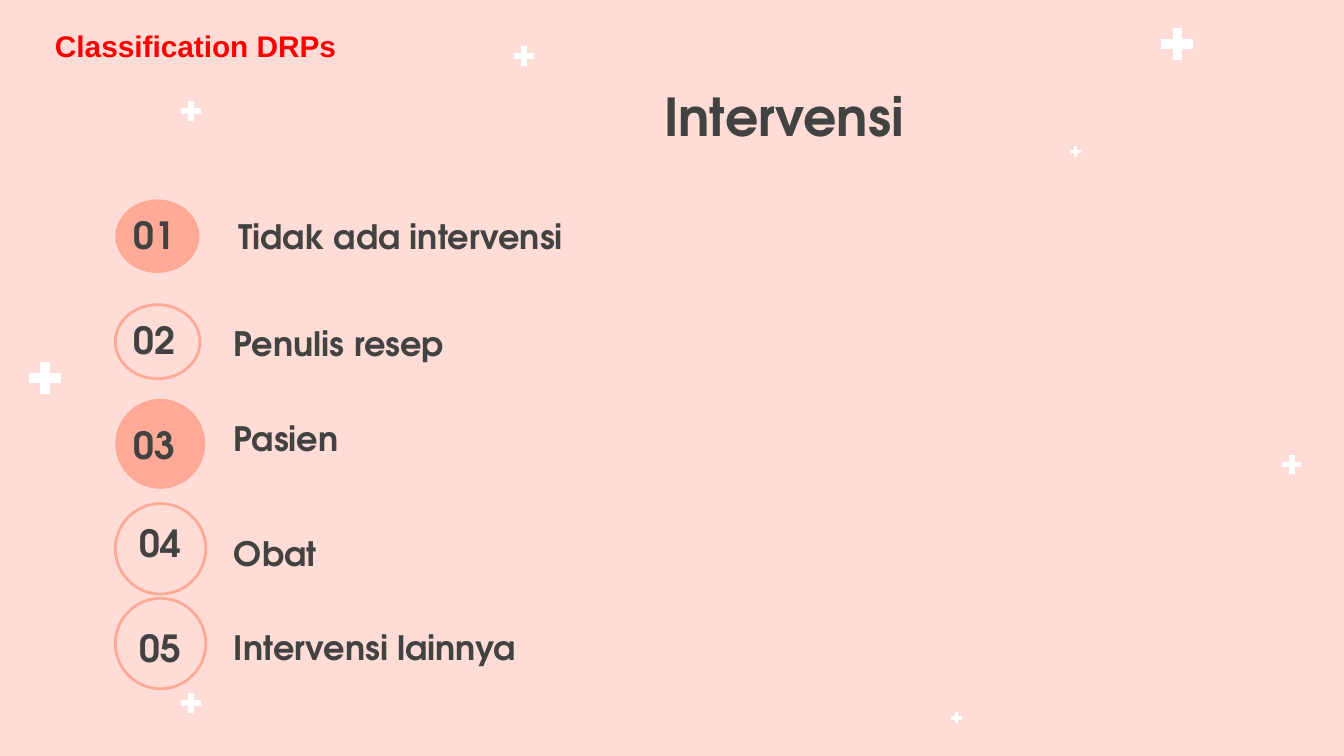
"""Build the slide that lists the five kinds of intervention."""
from dataclasses import dataclass

from pptx import Presentation
from pptx import util as u
from pptx.dml.color import RGBColor
from pptx.enum import shapes, text


@dataclass(frozen=True)
class Theme:
    back: str = "FFDCD6"
    coral: str = "FFAA97"
    ink: str = "424242"
    red: str = "FF0000"
    white: str = "FFFFFF"
    font: str = "TeX Gyre Adventor"
    plain: str = "Arial"
    title: int = 28
    num: int = 20
    label: int = 18
    tag: int = 16
    line: float = 1.5


class Deck:
    def __init__(self, theme, wide, high):
        self.theme = theme
        self.prs = Presentation()
        self.prs.slide_width, self.prs.slide_height = u.Cm(wide), u.Cm(high)
        self.slide = self.prs.slides.add_slide(self.prs.slide_layouts[6])
        self.paint(self.slide.background.fill, theme.back)

    def paint(self, fill, tone):
        fill.solid()
        fill.fore_color.rgb = RGBColor.from_string(tone)

    def plus(self, x, y, size):
        group = self.slide.shapes.add_group_shape()
        thin = size * 0.3
        for wide, high in ((thin, size), (size, thin)):
            left, right = u.Cm(x - wide / 2), u.Cm(x + wide / 2)
            top, base = u.Cm(y - high / 2), u.Cm(y + high / 2)
            pen = group.shapes.build_freeform(right, top)
            pen.add_line_segments([(right, base), (left, base), (left, top)])
            bar = pen.convert_to_shape()
            bar.shadow.inherit = False
            self.paint(bar.fill, self.theme.white)
            bar.line.fill.background()

    def disc(self, box, full):
        item = self.slide.shapes.add_shape(shapes.MSO_SHAPE.OVAL, *map(u.Cm, box))
        item.shadow.inherit = False
        if full:
            self.paint(item.fill, self.theme.coral)
            item.line.fill.background()
        else:
            item.fill.background()
            self.paint(item.line.fill, self.theme.coral)
            item.line.width = u.Pt(self.theme.line)

    def words(self, box, runs, size, tone=None, font=None, mid=False, pad=0.25,
              anchor=text.MSO_ANCHOR.MIDDLE):
        frame = self.slide.shapes.add_textbox(*map(u.Cm, box)).text_frame
        frame.word_wrap = True
        frame.vertical_anchor = anchor
        frame.margin_left = frame.margin_right = u.Cm(0.25)
        frame.margin_top = frame.margin_bottom = u.Cm(pad)
        para = frame.paragraphs[0]
        para.alignment = text.PP_ALIGN.CENTER if mid else text.PP_ALIGN.LEFT
        for part in runs:
            run = para.add_run()
            run.text = part
            run.font.name = font or self.theme.font
            run.font.size = u.Pt(size)
            run.font.bold = True
            run.font.color.rgb = RGBColor.from_string(tone or self.theme.ink)

    def save(self):
        self.prs.save("out.pptx")


STARS = [
    (22.25, 0.83, 0.61), (3.61, 2.1, 0.37), (9.9, 1.06, 0.37),
    (20.33, 2.86, 0.21), (0.85, 7.14, 0.61), (24.41, 8.78, 0.37),
    (18.08, 13.57, 0.21), (3.61, 13.29, 0.37),
]
ROWS = [
    ("Tidak ada intervensi", (3.77, 1.59, 1.39), True, (2.07, 3.9), (4.26, 3.93), 14.53),
    ("Penulis resep", (5.76, 1.6, 1.4), False, (2.07, 5.89), (4.17, 5.95), 14.53),
    ("Pasien", (7.54, 1.7, 1.7), True, (2.07, 7.87), (4.17, 7.74), 13.16),
    ("Obat", (9.52, 1.71, 1.71), False, (2.18, 9.73), (4.17, 9.92), 13.16),
    ("Intervensi lainnya", (11.31, 1.71, 1.71), False, (2.18, 11.71), (4.17, 11.7), 13.16),
]


def main():
    theme = Theme()
    deck = Deck(theme, 25.4, 14.29)
    for star in STARS:
        deck.plus(*star)
    for rank, (label, disc, full, num, spot, wide) in enumerate(ROWS, 1):
        deck.disc((2.18, *disc), full)
        deck.words((*num, 1.7, 1.07), [f"{rank:02d}"], theme.num, mid=True)
        deck.words((*spot, wide, 1.07), [label], theme.label)
    deck.words((0.79, 0.4, 9.93, 0.94), ["Classification ", "DRPs"], theme.tag,
               theme.red, theme.plain, pad=0.13, anchor=text.MSO_ANCHOR.TOP)
    deck.words((12.3, 0.99, 10.52, 2.39), ["Intervensi"], theme.title)
    deck.save()


if __name__ == "__main__":
    main()
